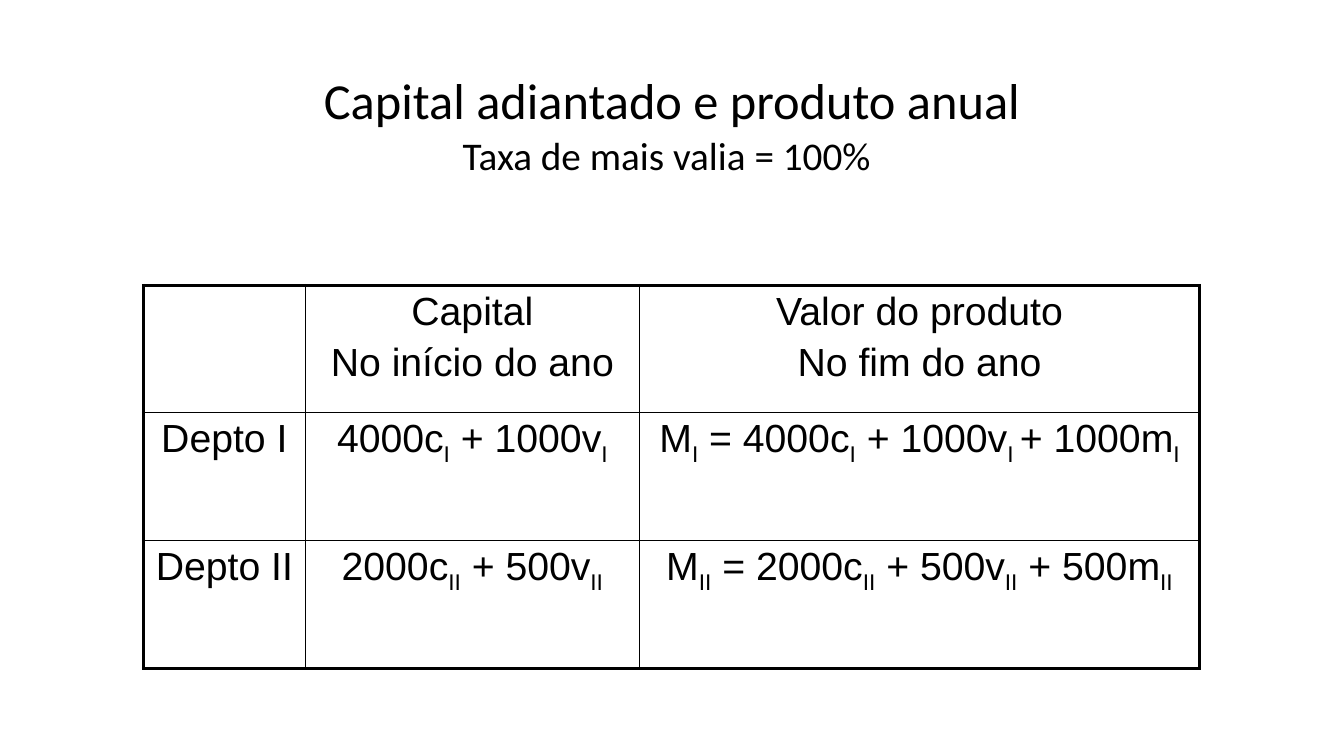
import pptx
import pptx.dml.color
import pptx.enum.text
import pptx.oxml
import pptx.oxml.ns
import pptx.util

WIDTH, HEIGHT = 13.33, 7.5
COLUMN_WIDTHS = [1.61, 3.31, 5.56]
ROW_HEIGHTS = [1.26, 1.27, 1.27]
BLACK = "000000"
OUTER_LINE, INNER_LINE = 2.25, 1
SUBSCRIPT_MARK = "|"

CELLS = [
    ["", "Capital\nNo início do ano", "Valor do produto\nNo fim do ano"],
    ["Depto I", "4000c|I| + 1000v|I", "M|I| = 4000c|I| + 1000v|I |+ 1000m|I"],
    ["Depto II", "2000c|II| + 500v|II", "M|II| = 2000c|II| + 500v|II| + 500m|II"],
]


def inches(*lengths):
    return [pptx.util.Inches(length) for length in lengths]


def set_color(color_format, value):
    color_format.rgb = pptx.dml.color.RGBColor.from_string(value)


def place(shape, left, top, width, height):
    shape.left, shape.top, shape.width, shape.height = inches(left, top, width, height)


def format_paragraph(paragraph, font_name, size, line_spacing=None):
    paragraph.alignment = pptx.enum.text.PP_ALIGN.CENTER
    if line_spacing:
        paragraph.line_spacing = line_spacing
    paragraph.font.name = font_name
    paragraph.font.size = pptx.util.Pt(size)
    set_color(paragraph.font.color, BLACK)


def fill_heading(shape, text, size, anchor):
    frame = shape.text_frame
    frame.word_wrap = True
    frame.auto_size = pptx.enum.text.MSO_AUTO_SIZE.NONE
    frame.vertical_anchor = anchor
    frame.text = text
    format_paragraph(frame.paragraphs[0], "Calibri", size, 0.9)


def add_formula(paragraph, text):
    for index, part in enumerate(text.split(SUBSCRIPT_MARK)):
        run = paragraph.add_run()
        run.text = part
        if index % 2:
            run.font._element.set("baseline", "-25000")


def fill_cell(cell, text):
    for index, line in enumerate(text.split("\n")):
        paragraph = cell.text_frame.add_paragraph() if index else cell.text_frame.paragraphs[0]
        if index:
            paragraph.space_before = pptx.util.Pt(5)
        if line:
            add_formula(paragraph, line)
        format_paragraph(paragraph, "Arial", 28)


def set_borders(cell, outer_sides):
    properties = cell._tc.get_or_add_tcPr()
    for side, is_outer in outer_sides.items():
        width = pptx.util.Pt(OUTER_LINE if is_outer else INNER_LINE)
        properties.append(pptx.oxml.parse_xml(
            f'<a:ln{side} {pptx.oxml.ns.nsdecls("a")} w="{width}">'
            f'<a:solidFill><a:srgbClr val="{BLACK}"/></a:solidFill></a:ln{side}>'))
    cell.fill.background()


def add_table(slide, left, top):
    row_count, column_count = len(ROW_HEIGHTS), len(COLUMN_WIDTHS)
    table = slide.shapes.add_table(
        row_count, column_count,
        *inches(left, top, sum(COLUMN_WIDTHS), sum(ROW_HEIGHTS))).table
    table.first_row = False
    table.horz_banding = False
    for column, width in zip(table.columns, inches(*COLUMN_WIDTHS)):
        column.width = width
    for row, height in zip(table.rows, inches(*ROW_HEIGHTS)):
        row.height = height
    for row_index, texts in enumerate(CELLS):
        for column_index, text in enumerate(texts):
            cell = table.cell(row_index, column_index)
            fill_cell(cell, text)
            set_borders(cell, {
                "L": column_index == 0,
                "R": column_index == column_count - 1,
                "T": row_index == 0,
                "B": row_index == row_count - 1,
            })


def main():
    presentation = pptx.Presentation()
    presentation.slide_width, presentation.slide_height = inches(WIDTH, HEIGHT)
    slide = presentation.slides.add_slide(presentation.slide_layouts[5])

    title = slide.shapes.title
    place(title, 0.05 * WIDTH, 0.04 * HEIGHT, 0.9 * WIDTH, 1.44)
    fill_heading(title, "Capital adiantado e produto anual", 36,
                 pptx.enum.text.MSO_ANCHOR.MIDDLE)

    subtitle = slide.shapes.add_textbox(*inches(1.75, 1.31, 9.72, 0.6))
    fill_heading(subtitle, "Taxa de mais valia = 100%", 28,
                 pptx.enum.text.MSO_ANCHOR.TOP)

    add_table(slide, 1.42, 2.83)
    presentation.save("out.pptx")


if __name__ == "__main__":
    main()
